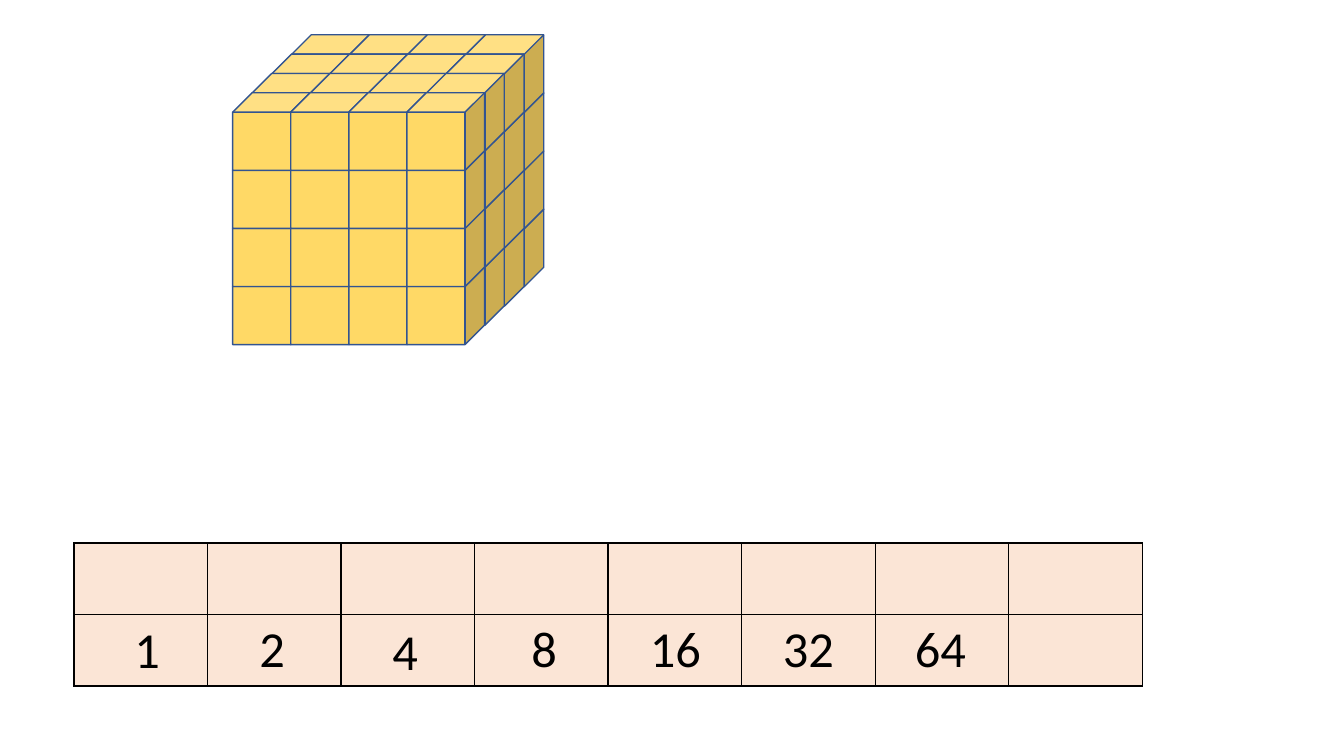
from itertools import product

from lxml.etree import SubElement
from pptx import Presentation
from pptx.dml.color import RGBColor
from pptx.enum.shapes import MSO_SHAPE as SHAPE
from pptx.enum.text import MSO_AUTO_SIZE as AUTO, PP_ALIGN as ALIGN
from pptx.oxml import parse_xml
from pptx.oxml.ns import nsdecls, qn
from pptx.util import Pt


def color(hex_string):
    return RGBColor.from_string(hex_string)


def add_text(text, left, top, width, height, size=36, font="Calibri", fill="000000"):
    tf = slide.shapes.add_textbox(Pt(left), Pt(top), Pt(width), Pt(height)).text_frame
    tf.word_wrap = True
    tf.auto_size = AUTO.SHAPE_TO_FIT_TEXT
    p = tf.paragraphs[0]
    p.alignment = ALIGN.CENTER
    r = p.add_run()
    r.text = text
    r.font.size = Pt(size)
    r.font.name = font
    r.font.color.rgb = color(fill)


prs = Presentation()
prs.slide_width, prs.slide_height = Pt(960), Pt(540)
slide = prs.slides.add_slide(prs.slide_layouts[6])

# Stack of 4 x 4 x 4 cubes, built from the back layer forward and from the bottom up
N = 4
CUBE = 55.4
STEP = 41.5
DEPTH_X, DEPTH_Y = 14.1, 13.8
LEFT, BOTTOM_TOP = 166.2, 190.8
for depth, level, col in product(reversed(range(N)), range(N), range(N)):
    # Only cubes on the front, top or right face can be seen
    if depth > 0 and level < N - 1 and col < N - 1:
        continue
    x = LEFT + col * STEP + depth * DEPTH_X
    y = BOTTOM_TOP - level * STEP - depth * DEPTH_Y
    sp = slide.shapes.add_shape(SHAPE.CUBE, Pt(x), Pt(y), Pt(CUBE), Pt(CUBE))
    sp.shadow.inherit = False
    sp.fill.solid()
    sp.fill.fore_color.rgb = color("FFD966")
    sp.line.color.rgb = color("325491")
    sp.line.width = Pt(1)

# Empty table for the doubling sequence
ROWS, COLS = 2, 8
COL_WIDTH, ROW_HEIGHT = 95.4, 51.1
table = slide.shapes.add_table(
    ROWS, COLS, Pt(52.8), Pt(387.8), Pt(COLS * COL_WIDTH), Pt(ROWS * ROW_HEIGHT)
).table
for column in table.columns:
    column.width = Pt(COL_WIDTH)
for row in table.rows:
    row.height = Pt(ROW_HEIGHT)
for cell in table.iter_cells():
    cell.fill.solid()
    cell.fill.fore_color.rgb = color("FBE5D6")
    tcPr = cell._tc.get_or_add_tcPr()
    for i, side in enumerate(("lnL", "lnR", "lnT", "lnB")):
        border = parse_xml(f'<a:{side} {nsdecls("a")} w="{Pt(1)}"/>')
        line_fill = SubElement(border, qn("a:solidFill"))
        SubElement(line_fill, qn("a:srgbClr"), val="000000")
        tcPr.insert(i, border)

# Numbers over the lower row: left and top of each text box
number_places = [
    (78.5, 438), (167.8, 437.5), (262.8, 439.2), (362, 437),
    (455.8, 437), (550.8, 437), (645.1, 437),
]
for power, (left, top) in enumerate(number_places):
    add_text(str(2 ** power), left, top, 53.3, 51.1)

prs.save("out.pptx")
